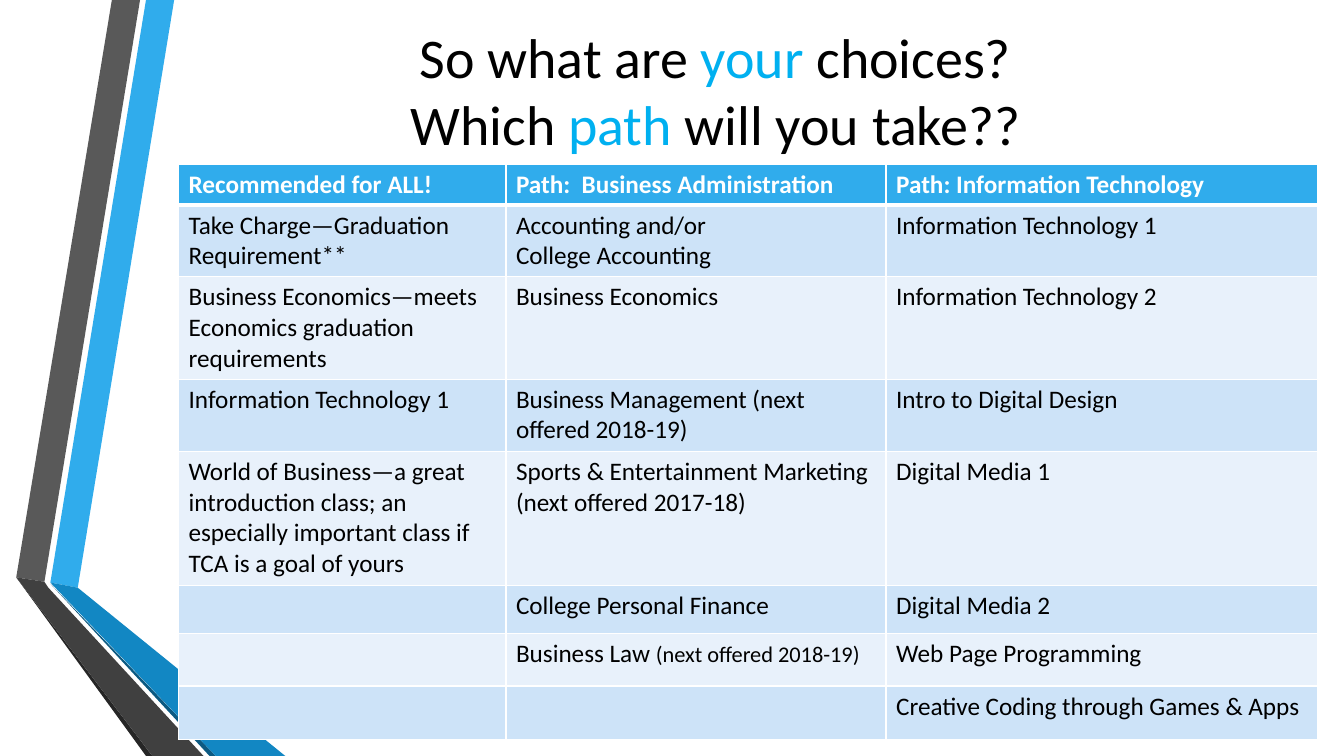
from lxml import etree
from pptx import Presentation
from pptx.dml.color import RGBColor
from pptx.enum.text import MSO_ANCHOR, MSO_AUTO_SIZE, PP_ALIGN
from pptx.oxml.ns import qn
from pptx.util import Cm, Pt

CENTER = PP_ALIGN.CENTER
MIDDLE = MSO_ANCHOR.MIDDLE
NO_FIT = MSO_AUTO_SIZE.NONE

COLORS = {
    "white": "FFFFFF", "black": "000000", "accent": "00B0F0", "header": "30ACEC",
    "odd": "CDE3F8", "even": "E8F1FB", "gray": "595959", "dark_gray": "404040",
    "gray_edge": "262626", "blue": "30ACEC", "dark_blue": "1287C3",
    "blue_edge": "0C5A82",
}

RIBBONS = [
    ("blue", [(1.27, 14.68), (1.96, 14.81), (4.39, 0), (3.68, 0)]),
    ("gray", [(3.53, 0), (2.82, 0), (0.41, 14.55), (1.12, 14.66)]),
    ("gray_edge", [(0.41, 14.55), (3.68, 19.05), (3.84, 19.05)]),
    ("blue_edge", [(1.27, 14.71), (5.28, 19.05), (5.44, 19.05)]),
    ("dark_blue", [(1.27, 14.68), (5.44, 19.05), (7.19, 19.05), (1.96, 14.81)]),
    ("dark_gray", [(5.13, 19.05), (1.22, 14.81), (1.12, 14.66), (0.41, 14.55),
                   (3.84, 19.05)]),
]

TITLE_LINES = [
    [("So what are ", "black"), ("your ", "accent"), ("choices?", "black")],
    [("Which ", "black"), ("path ", "accent"), ("will you take??", "black")],
]

COL_WIDTHS = [8.25, 9.58, 10.87]
ROW_HEIGHTS = [1.03, 1.8, 2.57, 1.82, 3.37, 1.22, 1.32, 1.35]
COURSES = [
    ["Recommended for ALL!", "Path:  Business Administration",
     "Path: Information Technology"],
    ["Take Charge—Graduation\nRequirement**",
     "Accounting and/or\nCollege Accounting", "Information Technology 1"],
    ["Business Economics—meets Economics graduation requirements",
     "Business Economics", "Information Technology 2"],
    ["Information Technology 1", "Business Management (next offered 2018-19)",
     "Intro to Digital Design"],
    ["World of Business—a great introduction class; an especially important "
     "class if TCA is a goal of yours",
     "Sports & Entertainment Marketing (next offered 2017-18)",
     "Digital Media 1"],
    ["", "College Personal Finance", "Digital Media 2"],
    ["", "Business Law ", "Web Page Programming"],
    ["", "", "Creative Coding through Games & Apps"],
]
SMALL_NOTES = {(6, 1): "(next offered 2018-19)"}


def rgb(name):
    """Return the named colour."""
    return RGBColor.from_string(COLORS[name])


def add_run(p, text, color, **formats):
    """Add a Calibri run with the given font settings."""
    r = p.add_run()
    r.text = text
    for key, value in {"name": "Calibri", **formats}.items():
        setattr(r.font, key, value)
    r.font.color.rgb = rgb(color)


def add_ribbon(s, color, points):
    """Draw one filled outline through points in centimetres."""
    corners = [(Cm(x), Cm(y)) for x, y in points]
    builder = s.shapes.build_freeform(*corners[0])
    builder.add_line_segments(corners[1:], close=True)
    sp = builder.convert_to_shape()
    sp.shadow.inherit = False
    sp.fill.solid()
    sp.fill.fore_color.rgb = rgb(color)
    sp.line.fill.background()


def fill_title(s):
    """Place the title and write its two-colour lines."""
    sp = s.shapes.title
    box = {"left": Cm(4.11), "top": Cm(0.36), "width": Cm(27.84), "height": Cm(3.78)}
    for key, value in box.items():
        setattr(sp, key, value)
    tf = sp.text_frame
    for key, value in {"word_wrap": True, "auto_size": NO_FIT,
                       "vertical_anchor": MIDDLE}.items():
        setattr(tf, key, value)
    p = tf.paragraphs[0]
    p.alignment = CENTER
    for i, line in enumerate(TITLE_LINES):
        if i:
            p.add_line_break()
        for text, color in line:
            add_run(p, text, color, size=Pt(40))


def set_borders(cell, bottom):
    """Give a cell white borders, with its own bottom width in points."""
    tc_pr = cell._tc.get_or_add_tcPr()
    for i, (side, width) in enumerate(zip("LRTB", (1, 1, 1, bottom))):
        ln = etree.Element(qn(f"a:ln{side}"), w=str(Pt(width)))
        fill = etree.SubElement(ln, qn("a:solidFill"))
        etree.SubElement(fill, qn("a:srgbClr"), val=COLORS["white"])
        tc_pr.insert(i, ln)


def fill_cell(cell, text, note, row):
    """Write and colour one cell of the course table."""
    is_header = row == 0
    cell.fill.solid()
    cell.fill.fore_color.rgb = rgb("header" if is_header else ("even", "odd")[row % 2])
    set_borders(cell, 3 if is_header else 1)
    color = "white" if is_header else "black"
    tf = cell.text_frame
    for i, line in enumerate(text.split("\n")):
        p = tf.add_paragraph() if i else tf.paragraphs[0]
        if line:
            add_run(p, line, color, size=Pt(18), bold=is_header)
    if note:
        add_run(p, note, color, size=Pt(16), bold=False)


def add_course_table(s):
    """Add the table of courses by path."""
    table = s.shapes.add_table(
        len(ROW_HEIGHTS), len(COL_WIDTHS), Cm(4.5), Cm(4.14),
        Cm(sum(COL_WIDTHS)), Cm(sum(ROW_HEIGHTS))).table
    for col, width in zip(table.columns, COL_WIDTHS):
        col.width = Cm(width)
    for row, height in zip(table.rows, ROW_HEIGHTS):
        row.height = Cm(height)
    for i, texts in enumerate(COURSES):
        for j, text in enumerate(texts):
            fill_cell(table.cell(i, j), text, SMALL_NOTES.get((i, j)), i)


def main():
    """Build the slide and save it."""
    prs = Presentation()
    prs.slide_width, prs.slide_height = Cm(33.87), Cm(19.05)
    s = prs.slides.add_slide(prs.slide_layouts[5])
    for color, points in RIBBONS:
        add_ribbon(s, color, points)
    fill_title(s)
    add_course_table(s)
    prs.save("out.pptx")


if __name__ == "__main__":
    main()
